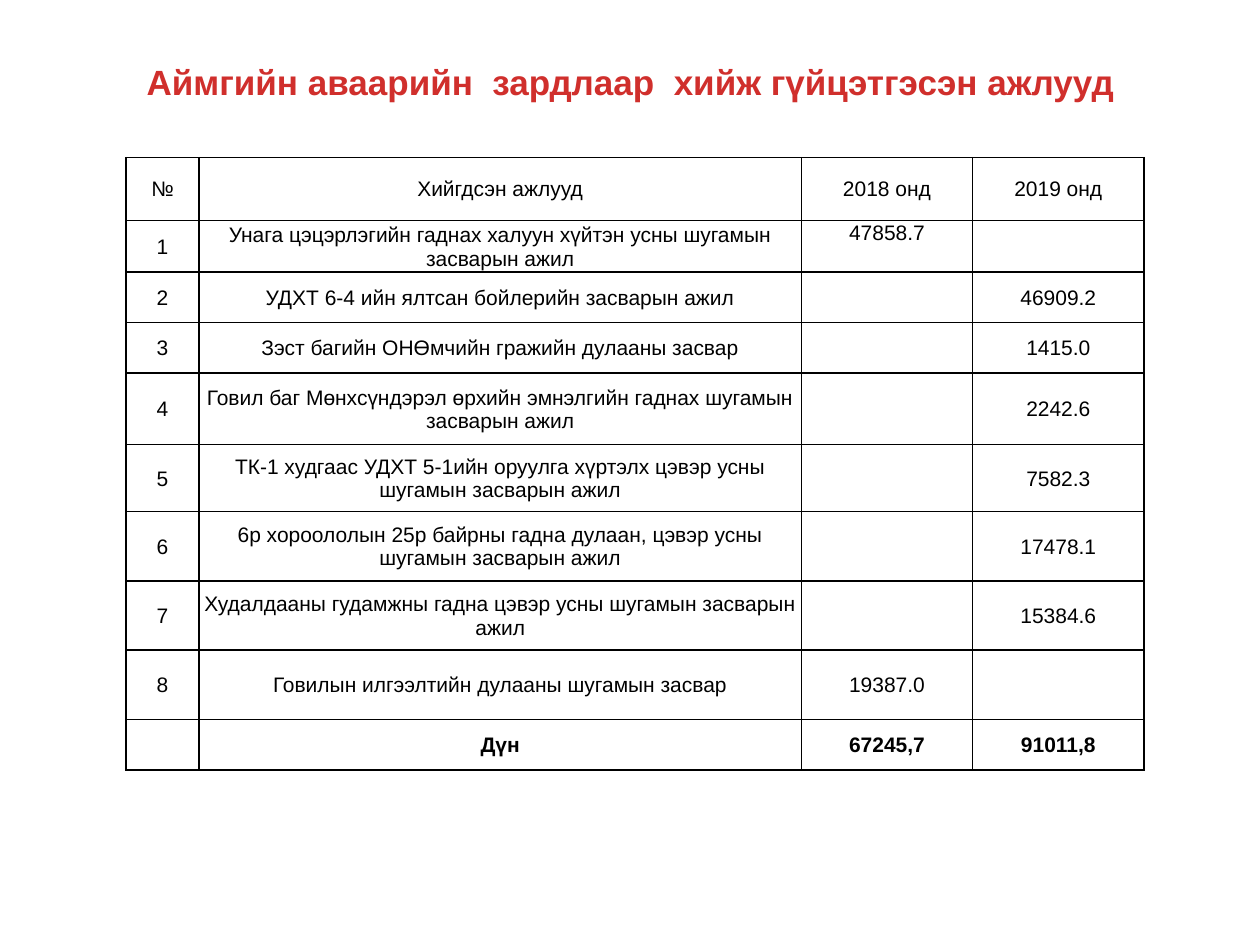
"""Build a slide listing repair works paid from the province emergency budget."""
from dataclasses import dataclass

from lxml.etree import SubElement
from pptx import Presentation
from pptx.dml.color import RGBColor
from pptx.enum.text import MSO_ANCHOR, PP_ALIGN
from pptx.oxml import parse_xml
from pptx.oxml.ns import nsdecls, qn
from pptx.slide import Slide
from pptx.table import _Cell
from pptx.text.text import TextFrame
from pptx.util import Inches, Pt


@dataclass(frozen=True)
class Theme:
    """Colours, font and type sizes of the slide."""
    font: str = "Arial"
    heading: str = "D02F2C"
    ink: str = "000000"
    heading_size: int = 20
    body_size: int = 12
    border_width: int = 1


@dataclass(frozen=True)
class Work:
    """One row of the works table."""
    number: str
    name: str
    year_2018: str
    year_2019: str
    height: float
    bold: bool = False
    cost_anchor: MSO_ANCHOR = MSO_ANCHOR.MIDDLE


THEME = Theme()
HEADING = "Аймгийн аваарийн  зардлаар  хийж гүйцэтгэсэн ажлууд"
COLUMN_WIDTHS = (0.58, 4.78, 1.36, 1.36)
WORKS = (
    Work("№", "Хийгдсэн ажлууд", "2018 онд", "2019 онд", 0.5),
    Work("1", "Унага цэцэрлэгийн гаднах халуун хүйтэн усны шугамын засварын ажил",
         "47858.7", "", 0.41, cost_anchor=MSO_ANCHOR.TOP),
    Work("2", "УДХТ 6-4 ийн ялтсан бойлерийн засварын ажил", "", "46909.2", 0.4),
    Work("3", "Зэст багийн ОНӨмчийн гражийн дулааны засвар", "", "1415.0", 0.4),
    Work("4", "Говил баг Мөнхсүндэрэл өрхийн эмнэлгийн гаднах шугамын засварын ажил",
         "", "2242.6", 0.57),
    Work("5", "ТК-1 худгаас УДХТ 5-1ийн оруулга хүртэлх цэвэр усны шугамын засварын ажил",
         "", "7582.3", 0.53),
    Work("6", "6р хороололын 25р байрны гадна дулаан, цэвэр усны шугамын засварын ажил",
         "", "17478.1", 0.55),
    Work("7", "Худалдааны гудамжны гадна цэвэр усны шугамын засварын ажил",
         "", "15384.6", 0.55),
    Work("8", "Говилын илгээлтийн дулааны шугамын засвар", "19387.0", "", 0.55),
    Work("", "Дүн", "67245,7", "91011,8", 0.4, bold=True),
)


def write(frame: TextFrame, text: str, size: int, color: str, bold: bool) -> None:
    """Put one centred, formatted line of text into a frame."""
    paragraph = frame.paragraphs[0]
    paragraph.alignment = PP_ALIGN.CENTER
    target = paragraph
    if text:
        target = paragraph.add_run()
        target.text = text
    for attribute, setting in {"name": THEME.font, "size": Pt(size), "bold": bold}.items():
        setattr(target.font, attribute, setting)
    target.font.color.rgb = RGBColor.from_string(color)


def draw_borders(cell: _Cell) -> None:
    """Outline all four sides of a cell."""
    properties = cell._tc.get_or_add_tcPr()
    for position, side in enumerate(("lnL", "lnR", "lnT", "lnB")):
        border = parse_xml(f'<a:{side} {nsdecls("a")} w="{Pt(THEME.border_width)}"/>')
        fill = SubElement(border, qn("a:solidFill"))
        SubElement(fill, qn("a:srgbClr"), val=THEME.ink)
        properties.insert(position, border)


def draw_cell(cell: _Cell, text: str, bold: bool, anchor: MSO_ANCHOR) -> None:
    """Format one table cell and fill in its text."""
    layout = {
        "margin_left": Inches(0.01),
        "margin_right": Inches(0.01),
        "margin_top": Inches(0.01),
        "margin_bottom": Inches(0),
        "vertical_anchor": anchor,
    }
    for attribute, setting in layout.items():
        setattr(cell, attribute, setting)
    cell.fill.background()
    draw_borders(cell)
    write(cell.text_frame, text, THEME.body_size, THEME.ink, bold)


def draw_heading(slide: Slide) -> None:
    """Place the slide title."""
    heading = slide.shapes.title
    placement = {"left": 0.92, "top": 0.3, "width": 8.17, "height": 0.7}
    for attribute, length in placement.items():
        setattr(heading, attribute, Inches(length))
    heading.text_frame.vertical_anchor = MSO_ANCHOR.MIDDLE
    write(heading.text_frame, HEADING, THEME.heading_size, THEME.heading, True)


def draw_works(slide: Slide) -> None:
    """Place the table of works and their costs."""
    works_table = slide.shapes.add_table(
        len(WORKS), len(COLUMN_WIDTHS), Inches(1), Inches(1.25),
        Inches(sum(COLUMN_WIDTHS)), Inches(sum(work.height for work in WORKS)),
    ).table
    works_table.first_row = works_table.horz_banding = False
    for column, width in zip(works_table.columns, COLUMN_WIDTHS):
        column.width = Inches(width)
    for row, work in zip(works_table.rows, WORKS):
        row.height = Inches(work.height)
        entries = (
            (work.number, MSO_ANCHOR.MIDDLE),
            (work.name, MSO_ANCHOR.MIDDLE),
            (work.year_2018, work.cost_anchor),
            (work.year_2019, work.cost_anchor),
        )
        for cell, (text, anchor) in zip(row.cells, entries):
            draw_cell(cell, text, work.bold, anchor)


def main() -> None:
    """Build and save the presentation."""
    presentation = Presentation()
    presentation.slide_width, presentation.slide_height = Inches(10), Inches(7.5)
    slide = presentation.slides.add_slide(presentation.slide_layouts.get_by_name("Title Only"))
    draw_heading(slide)
    draw_works(slide)
    presentation.save("out.pptx")


if __name__ == "__main__":
    main()
